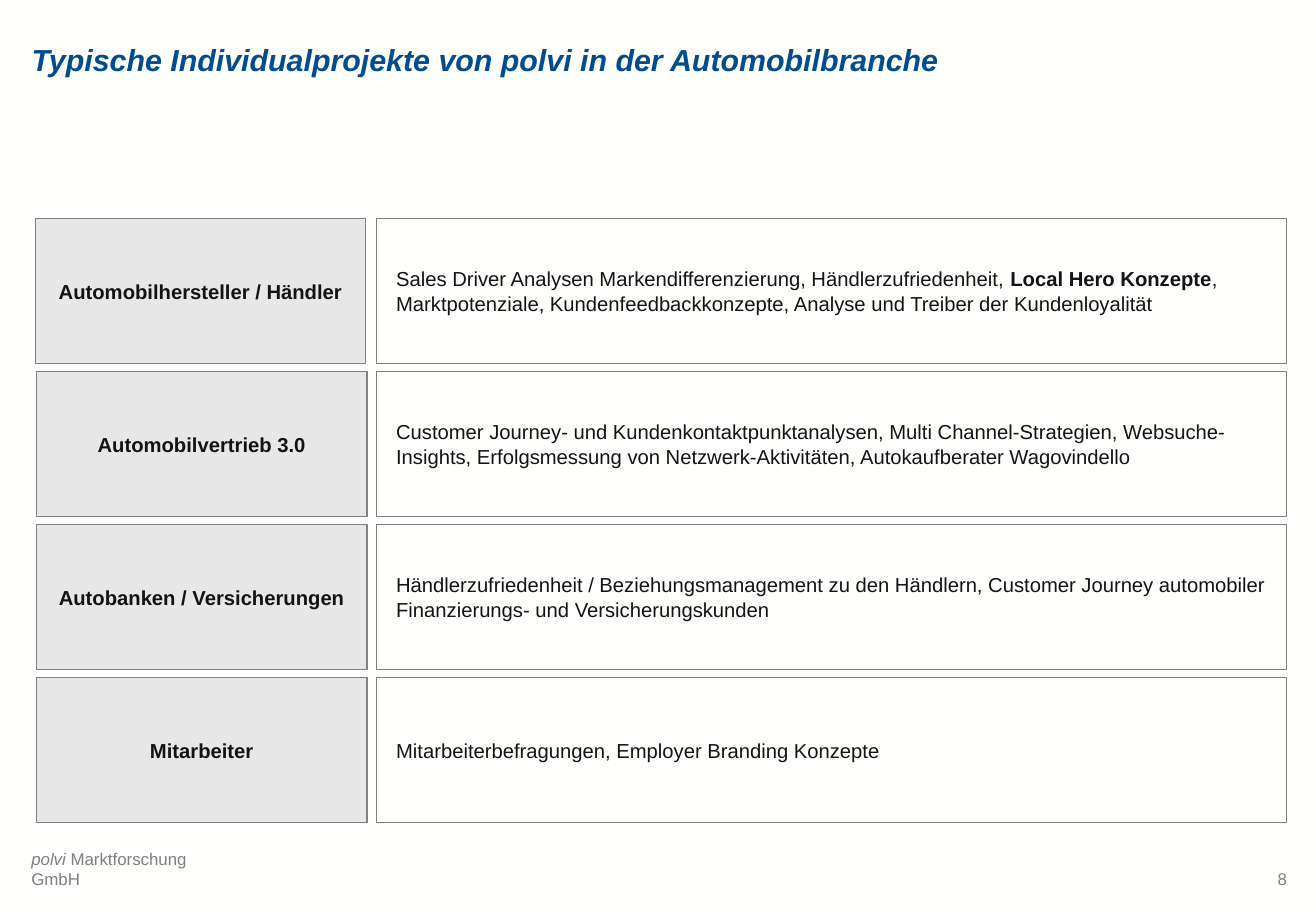
"""Slide listing typical custom research projects in the car industry."""
from pptx import Presentation
from pptx.dml.color import RGBColor
from pptx.enum.shapes import MSO_SHAPE
from pptx.enum.text import MSO_ANCHOR, PP_ALIGN
from pptx.util import Pt

RECT = MSO_SHAPE.RECTANGLE
TOP, MIDDLE, BOTTOM = MSO_ANCHOR.TOP, MSO_ANCHOR.MIDDLE, MSO_ANCHOR.BOTTOM
LEFT, CENTER, RIGHT = PP_ALIGN.LEFT, PP_ALIGN.CENTER, PP_ALIGN.RIGHT

TITLE = [("Typische Individualprojekte von polvi in der Automobilbranche", "bi")]
FOOTER = [("polvi", "i"), (" Marktforschung GmbH", "")]
PAGE = [("8", "")]
ROWS = [
    (29, "Automobilhersteller / Händler", [
        ("Sales Driver Analysen Markendifferenzierung, Händlerzufriedenheit, ", ""),
        ("Local Hero Konzepte", "b"),
        (", Marktpotenziale, Kundenfeedbackkonzepte, Analyse und Treiber der "
         "Kundenloyalität", "")]),
    (30, "Automobilvertrieb 3.0", [
        ("Customer Journey- und Kundenkontaktpunktanalysen, Multi Channel-Strategien, "
         "Websuche-Insights, Erfolgsmessung von Netzwerk-Aktivitäten, "
         "Autokaufberater Wagovindello", "")]),
    (30, "Autobanken / Versicherungen", [
        ("Händlerzufriedenheit / Beziehungsmanagement zu den Händlern, Customer Journey "
         "automobiler Finanzierungs- und Versicherungskunden", "")]),
    (30, "Mitarbeiter", [
        ("Mitarbeiterbefragungen, Employer Branding Konzepte", "")]),
]

THEME = {
    "font": "Arial", "title_size": 18, "body_size": 12, "small_size": 10,
    "paper": "FFFFFE", "title": "004C8F", "ink": "141313",
    "muted": "7F7F7F", "label": "E8E7E7", "border": "808080",
}

PX = 9144
SLIDE_W, SLIDE_H = 1083, 750
ROW_TOP, ROW_H, ROW_GAP = 180, 119, 7
LABEL_W, DETAIL_X, DETAIL_W = 272, 310, 749


def px(n):
    return n * PX


def color(name):
    return RGBColor.from_string(THEME[name])


def write(sp, runs, size="body_size", ink="ink", align=LEFT, anchor=MIDDLE,
          insets=(10, 5, 10, 5), wrap=True):
    tf = sp.text_frame
    tf.word_wrap = wrap
    tf.vertical_anchor = anchor
    tf.margin_left, tf.margin_top, tf.margin_right, tf.margin_bottom = map(px, insets)
    p = tf.paragraphs[0]
    p.alignment = align
    for text, style in runs:
        r = p.add_run()
        r.text = text
        r.font.name = THEME["font"]
        r.font.size = Pt(THEME[size])
        r.font.color.rgb = color(ink)
        r.font.bold = "b" in style
        r.font.italic = "i" in style


def add_text(s, box, runs, **fmt):
    write(s.shapes.add_textbox(*map(px, box)), runs, **fmt)


def add_box(s, box, fill, runs, **fmt):
    sp = s.shapes.add_shape(RECT, *map(px, box))
    sp.shadow.inherit = False
    sp.fill.solid()
    sp.fill.fore_color.rgb = color(fill)
    sp.line.color.rgb = color("border")
    sp.line.width = Pt(0.75)
    write(sp, runs, **fmt)


def main():
    prs = Presentation()
    prs.slide_width, prs.slide_height = px(SLIDE_W), px(SLIDE_H)
    s = prs.slides.add_slide(prs.slide_layouts[6])
    s.background.fill.solid()
    s.background.fill.fore_color.rgb = color("paper")

    add_text(s, (26, 18, 789, 61), TITLE, size="title_size", ink="title",
             insets=(0, 5, 10, 5))
    for i, (label_x, label, detail) in enumerate(ROWS):
        y = ROW_TOP + i * (ROW_H + ROW_GAP)
        add_box(s, (label_x, y, LABEL_W, ROW_H), "label", [(label, "b")],
                align=CENTER, insets=(4, 4, 4, 4))
        add_box(s, (DETAIL_X, y, DETAIL_W, ROW_H), "paper", detail,
                insets=(16, 4, 16, 4))
    add_text(s, (16, 710, 190, 27), FOOTER, size="small_size", ink="muted",
             anchor=BOTTOM, wrap=False)
    add_text(s, (862, 710, 207, 27), PAGE, size="small_size", ink="muted",
             align=RIGHT, anchor=TOP)
    prs.save("out.pptx")


if __name__ == "__main__":
    main()
